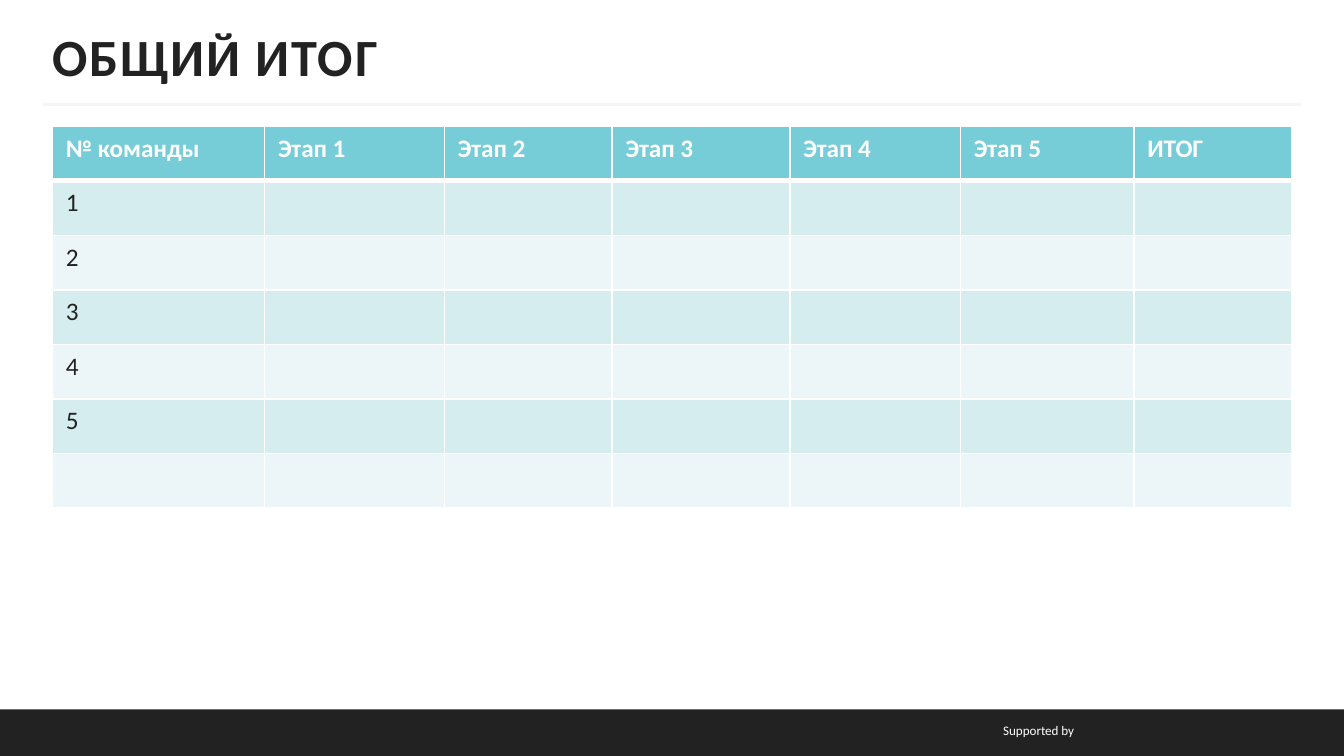
import dataclasses

import lxml.etree
import pptx
import pptx.dml.color
import pptx.enum.shapes
import pptx.enum.text
import pptx.oxml.ns
import pptx.util

Cm = pptx.util.Cm
Pt = pptx.util.Pt
qn = pptx.oxml.ns.qn
ALIGN = pptx.enum.text.PP_ALIGN
ANCHOR = pptx.enum.text.MSO_ANCHOR


@dataclasses.dataclass(frozen=True)
class Theme:
    font: str = "Calibri"
    dark: str = "222222"
    white: str = "FFFFFF"
    rule: str = "F5F5F5"
    header: str = "76CDD8"
    bands: tuple = ("D6EDF0", "ECF6F8")
    title_size: float = 28
    table_size: float = 13.5
    footer_size: float = 7


def rgb(value):
    return pptx.dml.color.RGBColor.from_string(value)


def write(frame, text, *, font, size, color, bold=False, align=ALIGN.LEFT, spacing=0):
    paragraph = frame.paragraphs[0]
    paragraph.alignment = align
    if not text:
        paragraph.font.size = Pt(size)
        return
    run = paragraph.add_run()
    run.text = text
    run.font.name = font
    run.font.size = Pt(size)
    run.font.bold = bold
    run.font.color.rgb = rgb(color)
    if spacing:
        run.font._element.set("spc", str(spacing * 100))


class SlideBuilder:
    def __init__(self, slide, theme):
        self.slide = slide
        self.theme = theme

    def title(self, text, left, top, width, height):
        heading = self.slide.shapes.title
        heading.left, heading.top = Cm(left), Cm(top)
        heading.width, heading.height = Cm(width), Cm(height)
        frame = heading.text_frame
        frame.auto_size = pptx.enum.text.MSO_AUTO_SIZE.NONE
        frame.word_wrap = True
        frame.vertical_anchor = ANCHOR.MIDDLE
        frame.margin_left = frame.margin_right = 0
        write(frame, text, font=self.theme.font, size=self.theme.title_size,
              color=self.theme.dark, bold=True, spacing=1)

    def bar(self, left, top, width, height):
        band = self.slide.shapes.add_shape(
            pptx.enum.shapes.MSO_SHAPE.RECTANGLE, Cm(left), Cm(top), Cm(width), Cm(height))
        band.shadow.inherit = False
        band.fill.solid()
        band.fill.fore_color.rgb = rgb(self.theme.dark)
        band.line.fill.background()

    def rule(self, left, right, y):
        divider = self.slide.shapes.add_connector(
            pptx.enum.shapes.MSO_CONNECTOR.STRAIGHT, Cm(left), Cm(y), Cm(right), Cm(y))
        divider.line.color.rgb = rgb(self.theme.rule)
        divider.line.width = Pt(1.5)
        lxml.etree.SubElement(divider._element.spPr, qn("a:effectLst"))

    def caption(self, text, left, top, width, height):
        credit = self.slide.shapes.add_textbox(Cm(left), Cm(top), Cm(width), Cm(height))
        credit.text_frame.word_wrap = True
        write(credit.text_frame, text, font=self.theme.font, size=self.theme.footer_size,
              color=self.theme.white, align=ALIGN.RIGHT)

    def border(self, cell, side, width):
        edge = lxml.etree.SubElement(
            cell._tc.get_or_add_tcPr(), qn(f"a:ln{side}"), w=str(Pt(width)))
        paint = lxml.etree.SubElement(edge, qn("a:solidFill"))
        lxml.etree.SubElement(paint, qn("a:srgbClr"), val=self.theme.white)

    def table(self, rows, left, top, column_widths, row_height):
        grid = self.slide.shapes.add_table(
            len(rows), len(column_widths), Cm(left), Cm(top),
            Cm(sum(column_widths)), Cm(row_height * len(rows))).table
        for column, width in zip(grid.columns, column_widths):
            column.width = Cm(width)
        for row_index, values in enumerate(rows):
            grid.rows[row_index].height = Cm(row_height)
            is_header = row_index == 0
            fill = self.theme.header if is_header else self.theme.bands[(row_index - 1) % 2]
            edges = {"L": 1, "R": 1, "T": 3 if row_index == 1 else 1, "B": 3 if is_header else 1}
            for column_index, value in enumerate(values):
                cell = grid.cell(row_index, column_index)
                for side, width in edges.items():
                    self.border(cell, side, width)
                cell.fill.solid()
                cell.fill.fore_color.rgb = rgb(fill)
                write(cell.text_frame, value, font=self.theme.font, size=self.theme.table_size,
                      color=self.theme.white if is_header else self.theme.dark, bold=is_header)


def main():
    presentation = pptx.Presentation()
    presentation.slide_width, presentation.slide_height = Cm(25.4), Cm(14.29)
    slide = presentation.slides.add_slide(presentation.slide_layouts[5])
    builder = SlideBuilder(slide, Theme())

    stages = [f"Этап {number}" for number in range(1, 6)]
    header = ["№ команды", *stages, "ИТОГ"]
    teams = ["1", "2", "3", "4", "5", ""]
    results = [[team] + [""] * (len(header) - 1) for team in teams]

    builder.bar(0, 13.41, 25.4, 0.88)
    builder.caption("Supported by", 13.82, 13.54, 6.73, 0.56)
    builder.rule(0.81, 24.59, 1.98)
    builder.title("ОБЩИЙ ИТОГ", 0.99, 0.64, 23.42, 0.84)
    builder.table([header, *results], 0.99, 2.39,
                  [4.01, 3.4, 3.17, 3.36, 3.22, 3.28, 2.98], 1.03)
    presentation.save("out.pptx")


if __name__ == "__main__":
    main()
